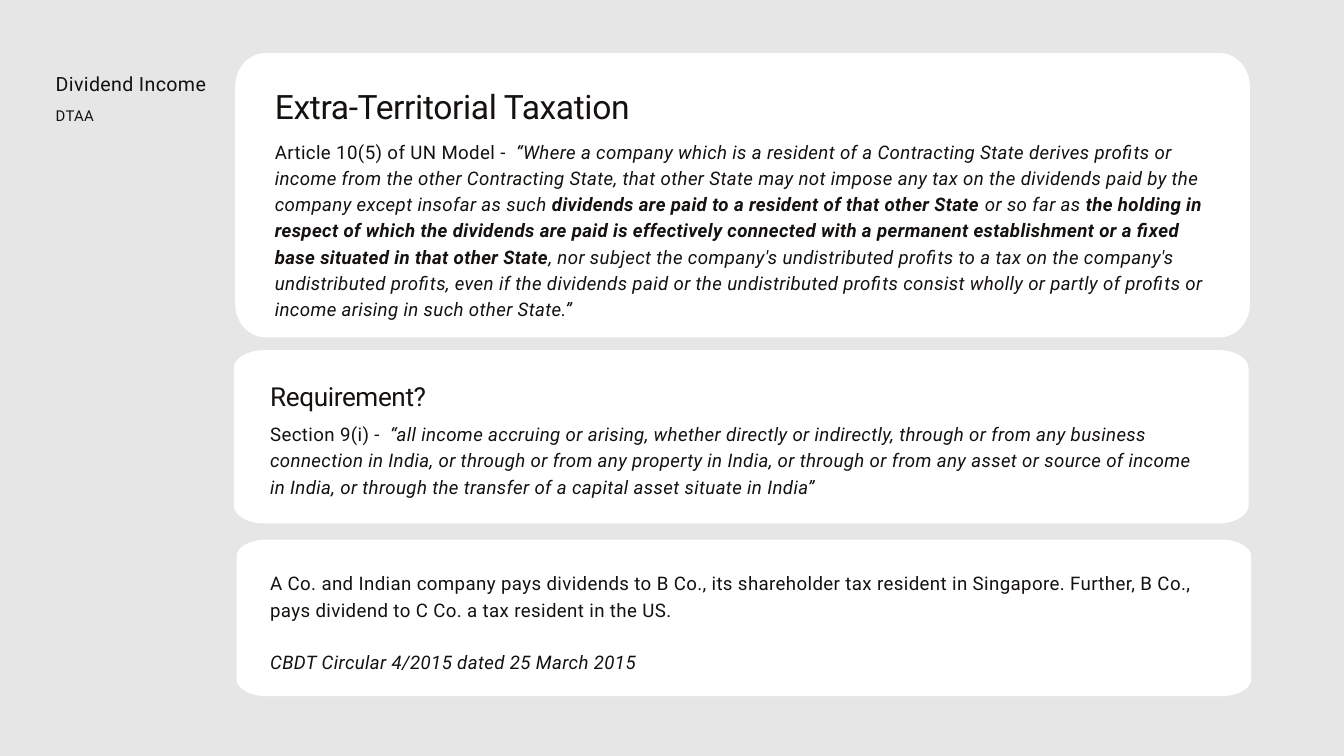
from lxml import etree
from pptx import Presentation
from pptx.dml import color
from pptx.enum import text
from pptx.oxml import ns
from pptx.util import Inches, Pt

COLORS = {"background": "E6E6E6", "card": "FFFFFF", "ink": "14110F"}


class SlideWriter:
    font = "Roboto"
    corner_width = 0.45
    curve_pull = 0.55

    def __init__(self, prs):
        self.slide = prs.slides.add_slide(prs.slide_layouts[6])
        self.paint(self.slide.background.fill, "background")

    def paint(self, fill, name):
        fill.solid()
        fill.fore_color.rgb = color.RGBColor.from_string(COLORS[name])

    def card(self, left, top, width, height, corner_height):
        rx, ry = self.corner_width, corner_height
        right, bottom = left + width, top + height
        anchors = [
            (right - rx, bottom), (left + rx, bottom),
            (left, bottom - ry), (left, top + ry),
            (left + rx, top), (right - rx, top),
            (right, top + ry), (right, bottom - ry),
        ]
        points = [(Inches(x), Inches(y)) for x, y in anchors]
        builder = self.slide.shapes.build_freeform(*points[0])
        builder.add_line_segments(points[1:] + points[:1], close=True)
        sp = builder.convert_to_shape()
        self.round_corners(sp)
        sp.shadow.inherit = False
        self.paint(sp.fill, "card")
        sp.line.fill.background()

    def round_corners(self, sp):
        segments = sp._element.xpath(".//a:lnTo")
        for i in range(1, len(segments), 2):
            start, end = [
                (int(segment[0].get("x")), int(segment[0].get("y")))
                for segment in segments[i - 1:i + 1]
            ]
            corner = (end[0], start[1]) if i % 4 == 1 else (start[0], end[1])
            curve = etree.Element(ns.qn("a:cubicBezTo"))
            for anchor in (start, end):
                x, y = [round(a + (c - a) * self.curve_pull) for a, c in zip(anchor, corner)]
                etree.SubElement(curve, ns.qn("a:pt"), x=str(x), y=str(y))
            etree.SubElement(curve, ns.qn("a:pt"), x=str(end[0]), y=str(end[1]))
            segments[i].getparent().replace(segments[i], curve)

    def text(self, left, top, width, height, paragraphs, size=20, leading=28, spacing=0.4, gap=0):
        sp = self.slide.shapes.add_textbox(Inches(left), Inches(top), Inches(width), Inches(height))
        tf = sp.text_frame
        tf.word_wrap = True
        tf.auto_size = text.MSO_AUTO_SIZE.NONE
        tf.margin_left = tf.margin_top = tf.margin_right = tf.margin_bottom = 0
        for i, runs in enumerate(paragraphs):
            p = tf.add_paragraph() if i else tf.paragraphs[0]
            p.line_spacing = Pt(leading)
            if i:
                p.space_before = Pt(gap)
            for words, style in runs:
                self.run(p, words, style, size, spacing)

    def run(self, p, words, style, size, spacing):
        r = p.add_run()
        r.text = words
        r.font.name = self.font
        r.font.size = Pt(size)
        r.font.bold = "b" in style
        r.font.italic = "i" in style
        self.paint(r.font.fill, "ink")
        r._r.get_or_add_rPr().set("spc", str(round(spacing * 100)))


def main():
    prs = Presentation()
    prs.slide_width, prs.slide_height = Inches(20), Inches(11.25)
    s = SlideWriter(prs)

    s.text(0.83, 1.04, 2.37, 0.36, [[("Dividend Income", "")]], size=21, leading=27.3)
    s.text(0.83, 1.54, 2.37, 0.29, [[("DTAA", "")]], size=16, leading=22.4, spacing=0.3)

    s.card(3.5, 0.79, 15.1, 4.23, 0.5)
    s.text(4.09, 2.04, 13.97, 2.39, [[
        ("Article 10(5) of UN Model - ", ""),
        (" “Where a company which is a resident of a Contracting State derives profits or "
         "income from the other Contracting State, that other State may not impose any tax on "
         "the dividends paid by the company except insofar as such ", "i"),
        ("dividends are paid to a resident of that other State ", "bi"),
        ("or so far as ", "i"),
        ("the holding in respect of which the dividends are paid is effectively connected with "
         "a permanent establishment or a fixed base situated in that other State", "bi"),
        (", nor subject the company's undistributed profits to a tax on the company's "
         "undistributed profits, even if the dividends paid or the undistributed profits "
         "consist wholly or partly of profits or income arising in such other State.”", "i"),
    ]])
    s.text(4.09, 1.12, 13.22, 0.65, [[("Extra-Territorial Taxation", "")]],
           size=36, leading=54.6, spacing=-0.4)

    s.card(3.52, 8.03, 15.1, 2.33, 0.25)

    s.card(3.48, 5.21, 15.1, 2.58, 0.27)
    s.text(4.02, 6.24, 13.97, 1.15, [[
        ("Section 9(i) - ", ""),
        (" “all income accruing or arising, whether directly or indirectly, through or from "
         "any business connection in India, or through or from any property in India, or "
         "through or from any asset or source of income in India, or through the transfer of "
         "a capital asset situate in India”", "i"),
    ]])
    s.text(4.02, 5.37, 13.22, 0.68, [[("Requirement?", "")]], size=28, leading=54.6, spacing=-0.4)

    s.text(4.02, 8.46, 13.97, 1.54, [
        [("A Co. and Indian company pays dividends to B Co., its shareholder tax resident in "
          "Singapore. Further, B Co., pays dividend to C Co. a tax resident in the US.", "")],
        [("CBDT Circular 4/2015 dated 25 March 2015", "i")],
    ], gap=28)

    prs.save("out.pptx")


if __name__ == "__main__":
    main()
